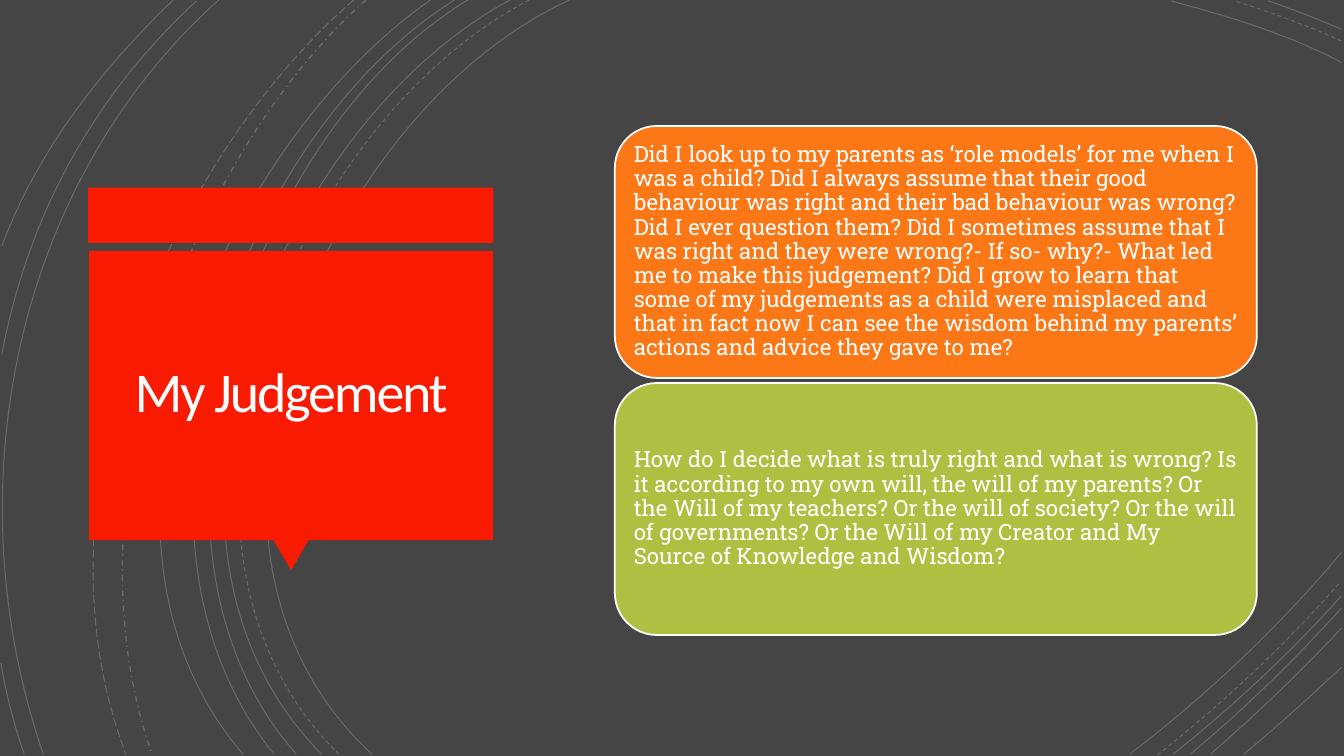
import pptx
import pptx.util
import pptx.oxml
import pptx.dml.color
import pptx.enum.dml
import pptx.enum.shapes
import pptx.enum.text

Pt = pptx.util.Pt
KIND = pptx.enum.shapes.MSO_SHAPE
DASH = pptx.enum.dml.MSO_LINE
ALIGN = pptx.enum.text.PP_ALIGN
NS = 'xmlns:a="http://schemas.openxmlformats.org/drawingml/2006/main"'

WHITE, DARK, RED = "FFFFFF", "454545", "F81B02"
TITLE = "My Judgement"
CARDS = [
    ("FC7715", "Did I look up to my parents as ‘role models’ for me when I was a child? "
     "Did I always assume that their good behaviour was right and their bad behaviour was wrong? "
     "Did I ever question them? Did I sometimes assume that I was right and they were wrong?- "
     "If so- why?- What led me to make this judgement? Did I grow to learn that some of my "
     "judgements as a child were misplaced and that in fact now I can see the wisdom behind "
     "my parents’ actions and advice they gave to me?"),
    ("AFBF41", "How do I decide what is truly right and what is wrong? Is it according to my own "
     "will, the will of my parents? Or the Will of my teachers? Or the will of society? Or the "
     "will of governments? Or the Will of my Creator and My Source of Knowledge and Wisdom?"),
]

# Background arcs by dash and width: start, two control points, end
ARCS = {
    (DASH.SOLID, 0.75): [
        [(406.8, 0), (226.8, 82.8), (103, 388.8), (265.7, 538.6)],
        [(958.3, 44.6), (920.2, 24.5), (877, 11.5), (836.6, 0.7)],
        [(807.1, 538.6), (861.8, 496.8), (913.7, 447.8), (958.3, 394.6)],
        [(364.3, 0), (194.4, 91.4), (79.2, 386.6), (229.7, 538.6)],
        [(958.3, 20.9), (941, 13.7), (923.8, 6.5), (905.8, 0.7)],
        [(838.1, 538.6), (880.6, 504.7), (921.6, 466.6), (958.3, 425.5)],
        [(334.1, 0), (175.7, 95.8), (79.2, 389.5), (211.7, 538.6)],
        [(850.3, 538.6), (888.5, 506.9), (924.5, 471.6), (958.3, 434.2)],
        [(324.7, 0), (166.3, 99.4), (69.8, 383.8), (195.8, 538.6)],
        [(864.7, 538.6), (897.1, 510.5), (928.8, 480.2), (958.3, 448.6)],
        [(307.4, 0), (156.2, 105.8), (38.2, 380.9), (173.5, 538.6)],
        [(888.5, 538.6), (912.2, 519.1), (935.3, 498.2), (958.3, 476.6)],
        [(156.2, 0), (7.9, 133.2), (-33.1, 352.8), (31, 538.6)],
        [(140.4, 0.7), (66.2, 69.1), (20.2, 154.1), (1.4, 252.7)],
        [(0.7, 473.8), (4.3, 496.1), (10.1, 517.7), (17.3, 538.6)],
        [(123.8, 0), (72, 49.7), (26.6, 108), (1.4, 175.7)],
    ],
    (DASH.DASH, 0.75): [
        [(378, 0), (205.2, 90), (88.6, 386.6), (241.9, 538.6)],
        [(958.3, 29.5), (933.8, 18), (907.2, 8.6), (882, 0.7)],
        [(826.6, 539.3), (873.4, 502.6), (918, 460.8), (957.6, 415.4)],
    ],
    (DASH.DASH_DOT, 1): [
        [(261.4, 0), (126.7, 119.5), (46.8, 366.5), (108.7, 538.6)],
    ],
    (DASH.LONG_DASH, 0.75): [
        [(252.7, 0), (113, 121.7), (20.9, 359.3), (90, 538.6)],
    ],
}

deck = pptx.Presentation()
deck.slide_width, deck.slide_height = Pt(960), Pt(540)
slide = deck.slides.add_slide(deck.slide_layouts[6])


def paint(fmt, color):
    fmt.solid()
    fmt.fore_color.rgb = pptx.dml.color.RGBColor.from_string(color)


def arc(points, dash, width):
    """Draw one faint cubic curve as an open freeform."""
    start, *rest = [(Pt(x), Pt(y)) for x, y in points]
    pen = slide.shapes.build_freeform(*start)
    pen.add_line_segments(rest, close=False)
    shape = pen.convert_to_shape()
    shape.shadow.inherit = False
    shape.fill.background()
    paint(shape.line.fill, WHITE)
    shape.line.width = Pt(width)
    shape.line.dash_style = dash
    tint = shape.element.xpath(".//a:ln//a:srgbClr")[0]
    tint.append(pptx.oxml.parse_xml(f'<a:alpha {NS} val="20000"/>'))
    # Turn the three straight segments into one curve
    legs = shape.element.xpath(".//a:lnTo")
    curve = pptx.oxml.parse_xml(f"<a:cubicBezTo {NS}/>")
    legs[0].addprevious(curve)
    for leg in legs:
        curve.append(leg[0])
        leg.getparent().remove(leg)


def block(kind, left, top, width, height, fill, edge=None):
    shape = slide.shapes.add_shape(kind, Pt(left), Pt(top), Pt(width), Pt(height))
    shape.shadow.inherit = False
    paint(shape.fill, fill)
    if edge:
        paint(shape.line.fill, edge)
        shape.line.width = Pt(1.25)
    else:
        shape.line.fill.background()
    return shape


def write(shape, text, font, size, color=WHITE, align=ALIGN.LEFT, lead=0.9, inset=4.8, track=0):
    frame = shape.text_frame
    frame.word_wrap = True
    frame.vertical_anchor = pptx.enum.text.MSO_ANCHOR.MIDDLE
    frame.margin_left = frame.margin_right = Pt(inset)
    frame.margin_top = frame.margin_bottom = Pt(inset)
    para = frame.paragraphs[0]
    para.alignment, para.line_spacing = align, lead
    run = para.add_run()
    run.text = text
    run.font.name, run.font.size = font, Pt(size)
    paint(run.font.fill, color)
    if track:
        run.font._element.set("spc", str(int(track * 100)))


paint(slide.background.fill, DARK)
for (dash, width), curves in ARCS.items():
    for points in curves:
        arc(points, dash, width)

block(KIND.RECTANGLE, 63, 134, 289.4, 39.6, RED)
tail = block(KIND.ISOSCELES_TRIANGLE, 195.3, 385.7, 25.2, 21.6, RED)
tail.rotation = 180
panel = block(KIND.RECTANGLE, 63.6, 179.3, 288.7, 206.6, RED)
write(panel, TITLE, "Calibri", 40, color="FFFEFF", align=ALIGN.CENTER,
      lead=0.85, inset=18, track=-1.5)

HIGH, GAP = 180, 3.6
for i, (fill, text) in enumerate(CARDS):
    card = block(KIND.ROUNDED_RECTANGLE, 439.2, 90 + i * (HIGH + GAP), 458.6, HIGH, fill, WHITE)
    write(card, text, "Roboto Slab", 16)

deck.save("out.pptx")
